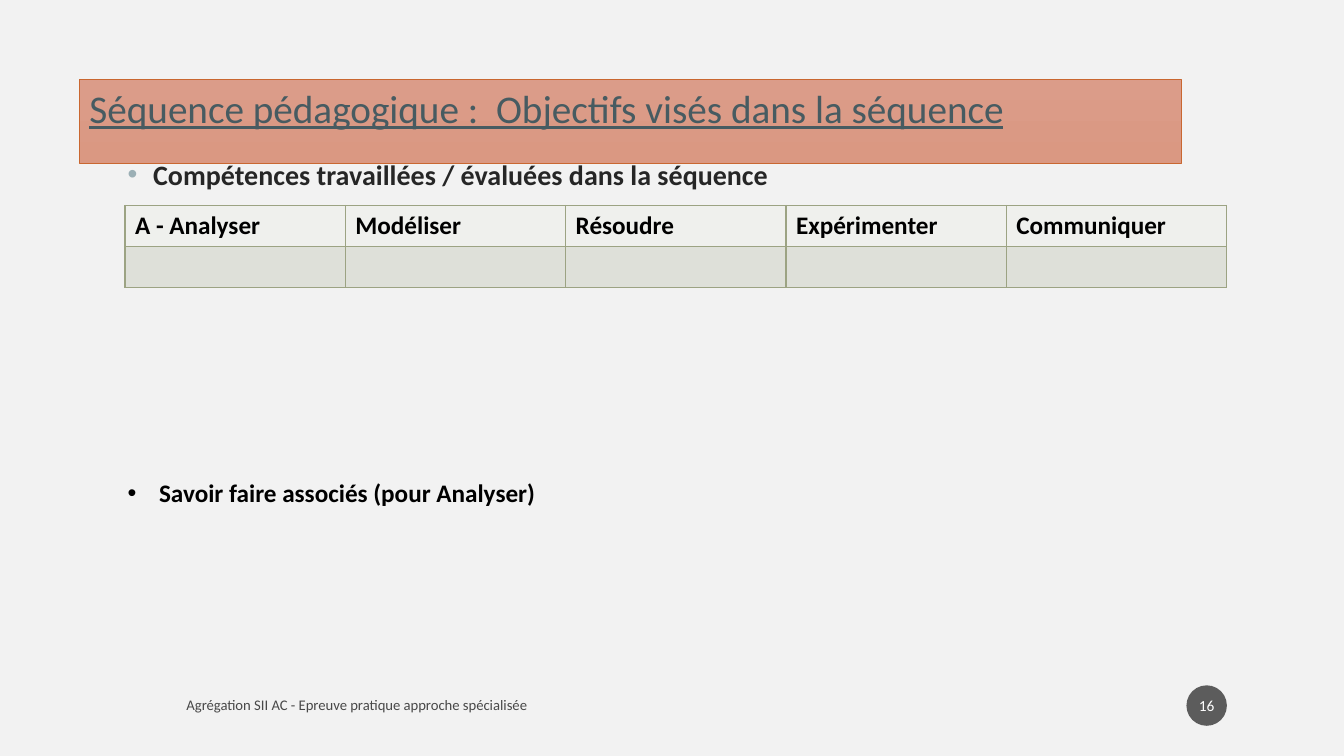
from dataclasses import dataclass
from typing import Any, Optional

from lxml.etree import SubElement
from pptx import Presentation
from pptx.dml.color import RGBColor
from pptx.enum.shapes import MSO_SHAPE
from pptx.enum.text import MSO_ANCHOR, MSO_AUTO_SIZE, PP_ALIGN
from pptx.oxml.ns import qn
from pptx.util import Cm, Pt


@dataclass(frozen=True)
class Theme:
    font: str = "Calibri"
    background: str = "F2F2F2"
    title_text: str = "475B61"
    title_gradient: tuple[str, str] = ("DB9C89", "DA9882")
    title_line: str = "C96731"
    body_text: str = "262626"
    black: str = "000000"
    white: str = "FFFFFF"
    bullet: str = "9BAFB5"
    badge: str = "1D1D1D"
    table_border: str = "9CA383"
    table_rows: tuple[str, str] = ("EFF0ED", "DEE0D9")
    title_size: float = 28
    heading_size: float = 20
    text_size: float = 18
    footer_size: float = 10.5
    number_size: float = 11
    opacity: int = 70


@dataclass(frozen=True)
class Box:
    left: float
    top: float
    width: float
    height: float

    def lengths(self) -> tuple[Cm, Cm, Cm, Cm]:
        return Cm(self.left), Cm(self.top), Cm(self.width), Cm(self.height)


@dataclass(frozen=True)
class TextBlock:
    box: Box
    text: str
    size: float
    color: str
    bold: bool = False
    bullet_color: Optional[str] = None
    indent: float = 0
    space_before: float = 0
    anchor: MSO_ANCHOR = MSO_ANCHOR.TOP
    opacity: Optional[int] = None


THEME = Theme()
TITLE = "Séquence pédagogique :  Objectifs visés dans la séquence"
TITLE_BOX = Box(2, 2, 27.76, 1.45)
TABLE_BOX = Box(3.15, 5.18, 27.76, 2.06)
BADGE_BOX = Box(29.9, 17.27, 1.02, 1.02)
SKILLS = ("A - Analyser", "Modéliser", "Résoudre", "Expérimenter", "Communiquer")
TEXT_BLOCKS = (
    TextBlock(Box(2.97, 3.84, 26.8, 1.75), "Compétences travaillées / évaluées dans la séquence",
              THEME.heading_size, THEME.body_text, True, THEME.bullet, 0.64, 10),
    TextBlock(Box(2.97, 11.91, 16.94, 1.02), "Savoir faire associés (pour Analyser)",
              THEME.text_size, THEME.black, True, THEME.black, 0.79),
    TextBlock(Box(4.45, 17.32, 16.38, 0.89), "Agrégation SII AC - Epreuve pratique approche spécialisée",
              THEME.footer_size, THEME.black, anchor=MSO_ANCHOR.MIDDLE, opacity=THEME.opacity),
)


def set_attributes(target: Any, values: dict[str, Any]) -> None:
    for name, value in values.items():
        setattr(target, name, value)


def set_opacity(fill: Any, percent: int) -> None:
    color = fill.fore_color._xFill.find(qn("a:srgbClr"))
    SubElement(color, qn("a:alpha"), val=str(percent * 1000))


def write_text(paragraph: Any, text: str, size: float, color: str,
               bold: bool = False, underline: bool = False) -> Any:
    run = paragraph.add_run()
    run.text = text
    set_attributes(run.font, {"name": THEME.font, "size": Pt(size), "bold": bold, "underline": underline})
    run.font.fill.solid()
    run.font.fill.fore_color.rgb = RGBColor.from_string(color)
    return run


def add_bullet(paragraph: Any, color: str, indent: float) -> None:
    properties = paragraph._p.get_or_add_pPr()
    properties.set("marL", str(Cm(indent)))
    properties.set("indent", str(-Cm(indent)))
    SubElement(SubElement(properties, qn("a:buClr")), qn("a:srgbClr"), val=color)
    SubElement(properties, qn("a:buFont"), typeface="Arial")
    SubElement(properties, qn("a:buChar"), char="•")


def add_title(slide: Any) -> None:
    title = slide.shapes.title
    set_attributes(title, dict(zip(("left", "top", "width", "height"), TITLE_BOX.lengths())))
    title.fill.gradient()
    title.fill.gradient_angle = 270
    for stop, color in zip(title.fill.gradient_stops, THEME.title_gradient):
        stop.color.rgb = RGBColor.from_string(color)
    title.line.color.rgb = RGBColor.from_string(THEME.title_line)
    title.line.width = Pt(0.5)
    set_attributes(title.text_frame, {"word_wrap": True, "vertical_anchor": MSO_ANCHOR.TOP,
                                      "auto_size": MSO_AUTO_SIZE.SHAPE_TO_FIT_TEXT})
    paragraph = title.text_frame.paragraphs[0]
    paragraph.alignment = PP_ALIGN.LEFT
    write_text(paragraph, TITLE, THEME.title_size, THEME.title_text, underline=True)


def add_text(slide: Any, block: TextBlock) -> None:
    frame = slide.shapes.add_textbox(*block.box.lengths()).text_frame
    set_attributes(frame, {"word_wrap": True, "vertical_anchor": block.anchor})
    paragraph = frame.paragraphs[0]
    if block.space_before:
        paragraph.space_before = Pt(block.space_before)
    if block.bullet_color:
        add_bullet(paragraph, block.bullet_color, block.indent)
    run = write_text(paragraph, block.text, block.size, block.color, block.bold)
    if block.opacity:
        set_opacity(run.font.fill, block.opacity)


def add_borders(cell: Any) -> None:
    properties = cell._tc.get_or_add_tcPr()
    for side in ("lnL", "lnR", "lnT", "lnB"):
        line = SubElement(properties, qn(f"a:{side}"), w=str(Pt(1)))
        SubElement(SubElement(line, qn("a:solidFill")), qn("a:srgbClr"), val=THEME.table_border)


def add_skills_table(slide: Any) -> None:
    row_count = len(THEME.table_rows)
    table = slide.shapes.add_table(row_count, len(SKILLS), *TABLE_BOX.lengths()).table
    for row, color in zip(table.rows, THEME.table_rows):
        row.height = Cm(TABLE_BOX.height / row_count)
        for cell in row.cells:
            add_borders(cell)
            cell.fill.solid()
            cell.fill.fore_color.rgb = RGBColor.from_string(color)
    for cell, skill in zip(table.rows[0].cells, SKILLS):
        write_text(cell.text_frame.paragraphs[0], skill, THEME.text_size, THEME.black, bold=True)


def add_number_badge(slide: Any, number: str) -> None:
    badge = slide.shapes.add_shape(MSO_SHAPE.OVAL, *BADGE_BOX.lengths())
    badge.shadow.inherit = False
    badge.fill.solid()
    badge.fill.fore_color.rgb = RGBColor.from_string(THEME.badge)
    set_opacity(badge.fill, THEME.opacity)
    badge.line.fill.background()
    set_attributes(badge.text_frame, {"margin_left": Cm(0.05), "margin_right": Cm(0.05),
                                      "vertical_anchor": MSO_ANCHOR.MIDDLE})
    paragraph = badge.text_frame.paragraphs[0]
    paragraph.alignment = PP_ALIGN.CENTER
    write_text(paragraph, number, THEME.number_size, THEME.white)


def main() -> None:
    presentation = Presentation()
    set_attributes(presentation, {"slide_width": Cm(33.87), "slide_height": Cm(19.05)})
    slide = presentation.slides.add_slide(presentation.slide_layouts.get_by_name("Title Only"))
    slide.background.fill.solid()
    slide.background.fill.fore_color.rgb = RGBColor.from_string(THEME.background)

    # Heading and skills
    add_title(slide)
    add_skills_table(slide)

    # Bulleted lines and footer
    for block in TEXT_BLOCKS:
        add_text(slide, block)
    add_number_badge(slide, "16")

    presentation.save("out.pptx")


if __name__ == "__main__":
    main()
